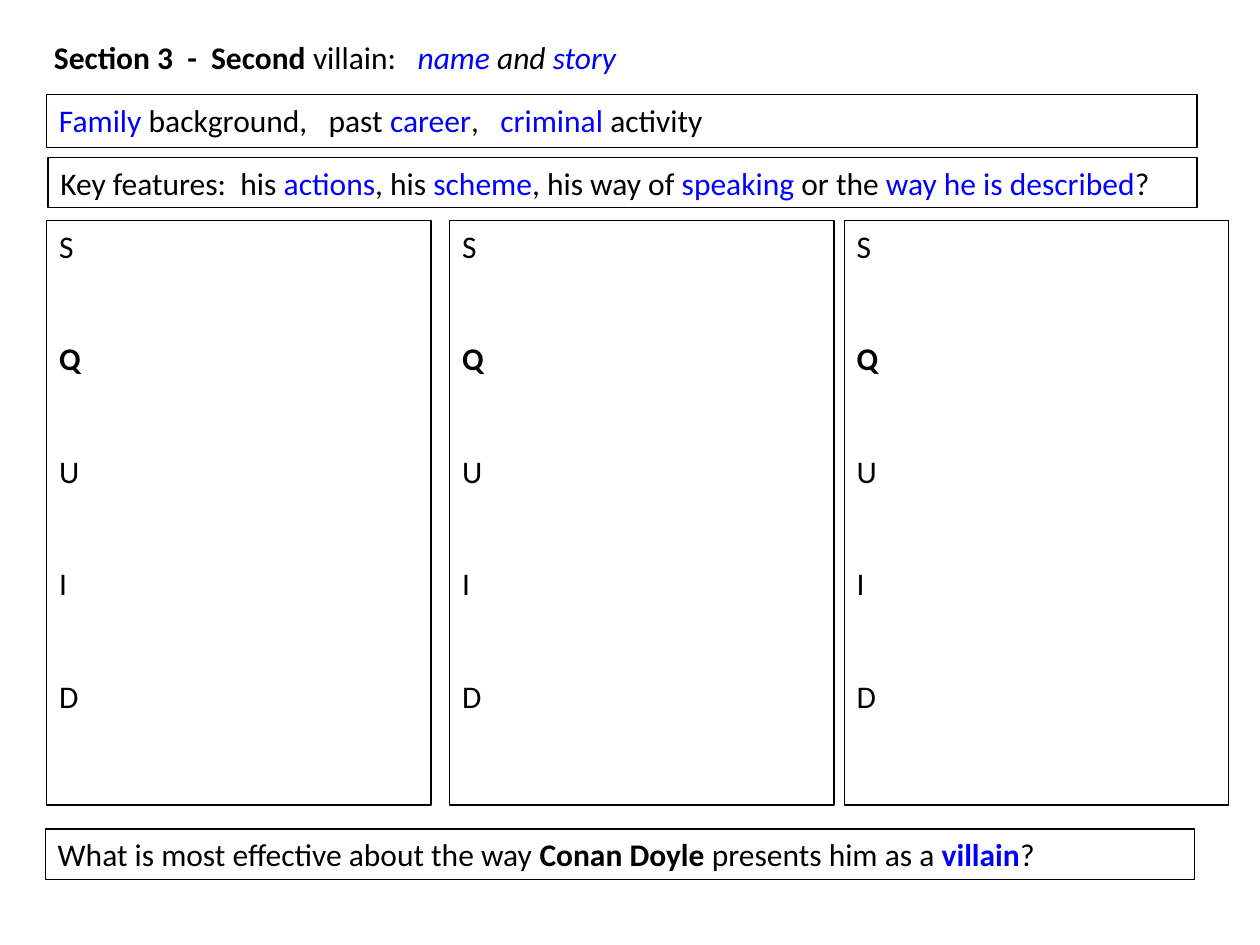
"""Build a worksheet slide for planning notes on the second villain."""
from dataclasses import dataclass

from pptx import Presentation
from pptx.dml.color import RGBColor
from pptx.enum.shapes import MSO_SHAPE
from pptx.enum.text import MSO_ANCHOR, PP_ALIGN
from pptx.util import Inches, Pt

RECT = MSO_SHAPE.RECTANGLE
TOP = MSO_ANCHOR.TOP
LEFT = PP_ALIGN.LEFT


@dataclass(frozen=True)
class Theme:
    font: str = "Calibri"
    size: Pt = Pt(18)
    letter_gap: Pt = Pt(42.7)
    border: Pt = Pt(0.75)
    ink: RGBColor = RGBColor(0, 0, 0)
    accent: RGBColor = RGBColor(0, 0, 255)


THEME = Theme()


def add_runs(p, runs):
    """Add (text, style) runs; style letters are a accent, b bold, i italic."""
    p.alignment = LEFT
    for text, style in runs:
        r = p.add_run()
        r.text = text
        r.font.name = THEME.font
        r.font.size = THEME.size
        r.font.bold = "b" in style
        r.font.italic = "i" in style
        r.font.color.rgb = THEME.accent if "a" in style else THEME.ink


def add_box(s, left, top, width, height):
    """Add an unfilled bordered rectangle and return its text frame."""
    sp = s.shapes.add_shape(RECT, Inches(left), Inches(top), Inches(width), Inches(height))
    sp.shadow.inherit = False
    sp.fill.background()
    sp.line.color.rgb = THEME.ink
    sp.line.width = THEME.border
    tf = sp.text_frame
    tf.word_wrap = True
    tf.vertical_anchor = TOP
    return tf


prs = Presentation()
prs.slide_width = Inches(10)
prs.slide_height = Inches(7.5)
s = prs.slides.add_slide(prs.slide_layouts[6])

title = s.shapes.add_textbox(Inches(0.33), Inches(0.25), Inches(5.42), Inches(0.4))
title.text_frame.word_wrap = True
add_runs(title.text_frame.paragraphs[0], [
    ("Section 3  -  Second", "b"), (" villain:   ", ""),
    ("name", "ai"), (" and ", "i"), ("story", "ai"),
])

prompts = [
    (0.37, 0.75, 9.13, 0.42, [
        ("Family ", "a"), ("background,   past", ""), (" career", "a"),
        (",   ", ""), ("criminal ", "a"), ("activity", ""),
    ]),
    (0.38, 1.25, 9.12, 0.4, [
        ("Key features:  his ", ""), ("actions", "a"), (", his ", ""),
        ("scheme", "a"), (", his way of ", ""), ("speaking", "a"),
        (" or the ", ""), ("way he is described", "a"), ("?", ""),
    ]),
    (0.36, 6.58, 9.12, 0.4, [
        ("What is most effective about the way ", ""), ("Conan Doyle ", "b"),
        ("presents him as a ", ""), ("villain", "ab"), ("?", ""),
    ]),
]
for left, top, width, height, runs in prompts:
    tf = add_box(s, left, top, width, height)
    add_runs(tf.paragraphs[0], runs)

for left in (0.37, 3.57, 6.7):
    tf = add_box(s, left, 1.75, 3.05, 4.64)
    for i, letter in enumerate("SQUID"):
        p = tf.add_paragraph() if i else tf.paragraphs[0]
        if i:
            p.space_before = THEME.letter_gap
        add_runs(p, [(letter, "b" if letter == "Q" else "")])

prs.save("out.pptx")
